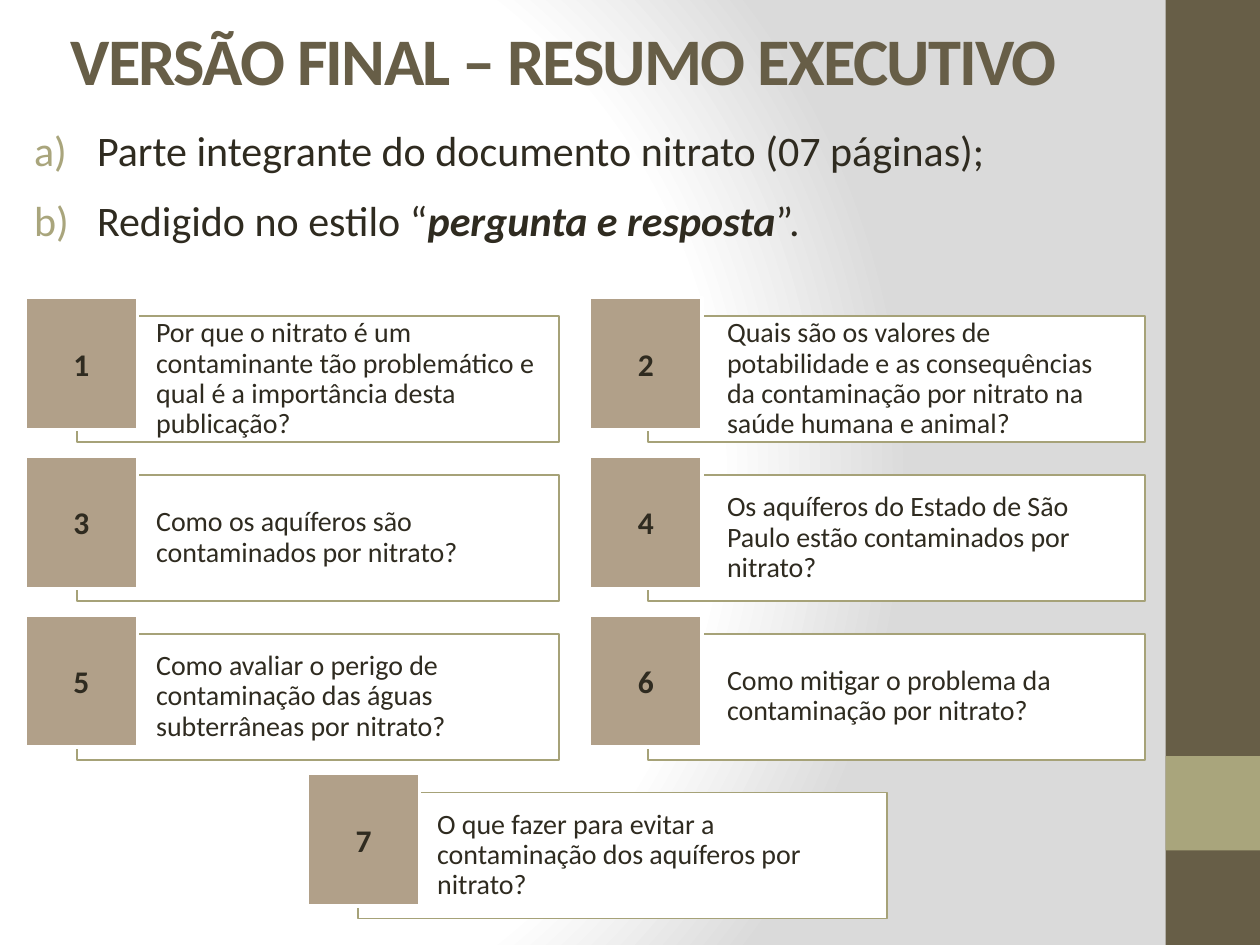
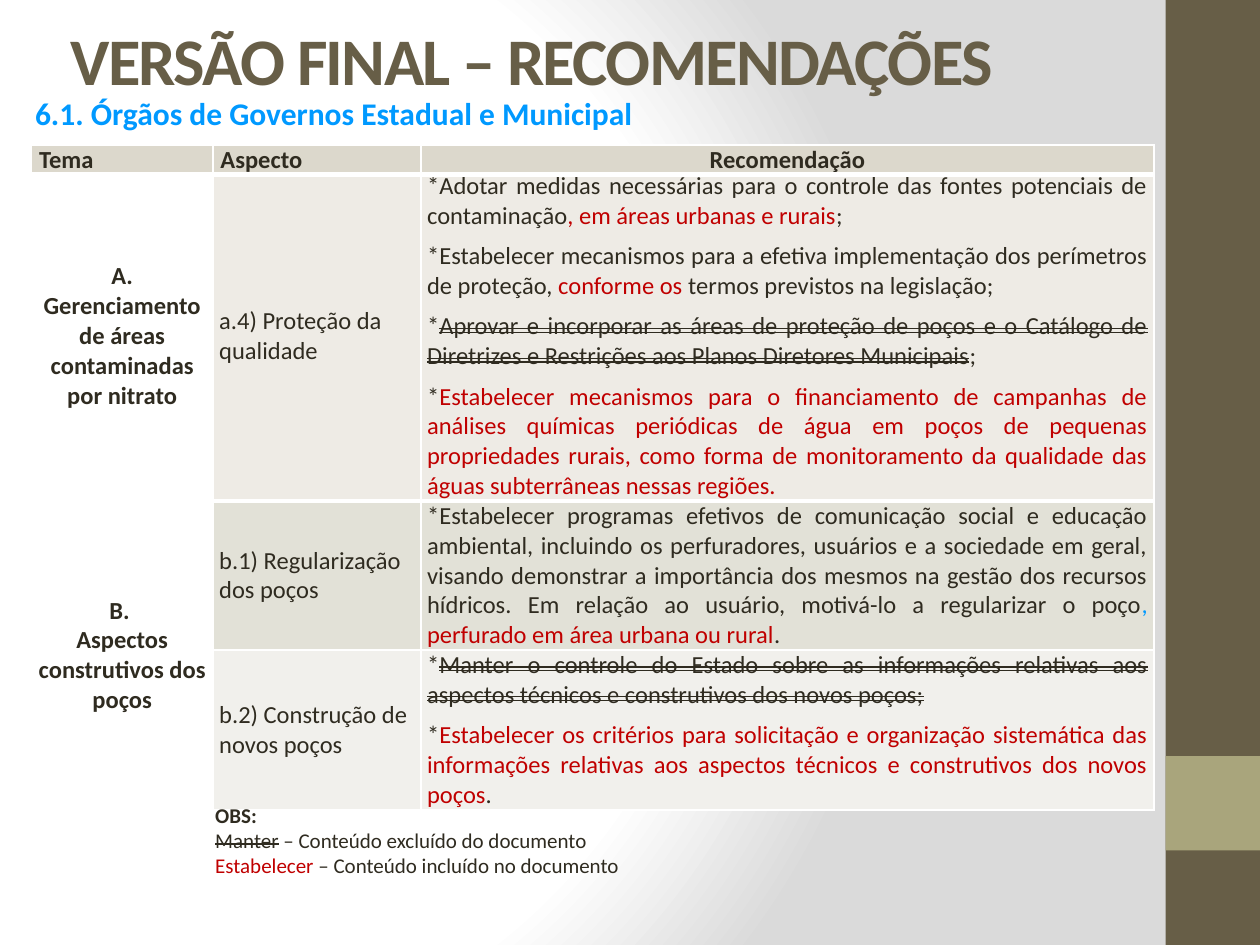
import pptx
import pptx.dml.color
import pptx.enum.shapes
import pptx.enum.text
import pptx.oxml
import pptx.oxml.ns
import pptx.util

Inches, Pt = pptx.util.Inches, pptx.util.Pt
RGB = pptx.dml.color.RGBColor
ALIGN = pptx.enum.text.PP_ALIGN
ANCHOR = pptx.enum.text.MSO_ANCHOR
RECTANGLE = pptx.enum.shapes.MSO_SHAPE.RECTANGLE

FONT = "Calibri"
OLIVE = RGB(0x67, 0x5E, 0x47)
SAGE = RGB(0xA9, 0xA5, 0x7C)
CARD_LINE = RGB(0xA6, 0xA2, 0x78)
TAN = RGB(0xB1, 0xA0, 0x89)
INK = RGB(0x2F, 0x2B, 0x20)
RED = RGB(0xC0, 0x00, 0x00)
BLUE = RGB(0x00, 0x99, 0xFF)
WHITE = RGB(0xFF, 0xFF, 0xFF)
HEAD_FILL = RGB(0xDC, 0xD8, 0xCC)
THEME_A_FILL = RGB(0xEE, 0xEB, 0xE5)
THEME_B_FILL = RGB(0xE2, 0xE1, 0xD7)
THEME_B_LIGHT = RGB(0xF1, 0xF0, 0xEC)

# Content: a paragraph is a string or a list of strings and (text, style) pairs
ADDED, BLUE_RUN = {"color": RED}, {"color": BLUE}
REMOVED, STRUCK = {"strike": "dblStrike"}, {"strike": "sngStrike"}
BOLD, BOLD_ITALIC = {"bold": True}, {"bold": True, "italic": True}

SUMMARY_TITLE = "VERSÃO FINAL – RESUMO EXECUTIVO"
SUMMARY_POINTS = [
    "Parte integrante do documento nitrato (07 páginas);",
    ["Redigido no estilo “", ("pergunta e resposta", BOLD_ITALIC), "”."],
]
QUESTIONS = [
    "Por que o nitrato é um contaminante tão problemático e qual é a importância desta publicação?",
    "Quais são os valores de potabilidade e as consequências da contaminação por nitrato na saúde humana e animal?",
    "Como os aquíferos são contaminados por nitrato?",
    "Os aquíferos do Estado de São Paulo estão contaminados por nitrato?",
    "Como avaliar o perigo de contaminação das águas subterrâneas por nitrato?",
    "Como mitigar o problema da contaminação por nitrato?",
    "O que fazer para evitar a contaminação dos aquíferos por nitrato?",
]
# Number left, card left, card width
LEFT_COLUMN, RIGHT_COLUMN = (0.2, 0.61, 3.83), (4.68, 5.14, 3.95)
LAST_CARD = (2.44, 2.84, 4.2)
CARD_TOP, CARD_PITCH = 2.51, 1.26

ADVICE_TITLE = "VERSÃO FINAL – RECOMENDAÇÕES"
ADVICE_SECTION = "6.1. Órgãos de Governos Estadual e Municipal"
ADVICE_HEADS = ["Tema", "Aspecto", "Recomendação"]
COLUMN_WIDTHS = [1.44, 1.65, 5.82]
# Theme, aspect, recommendations, row height, fill, bottom border
ADVICE = [
    (["A. Gerenciamento de áreas contaminadas por nitrato"],
     "a.4) Proteção da qualidade",
     [["*Adotar medidas necessárias para o controle das fontes potenciais de contaminação",
       (", em áreas urbanas e rurais", ADDED), ";"],
      ["*Estabelecer mecanismos para a efetiva implementação dos perímetros de proteção, ",
       ("conforme os ", ADDED), "termos previstos na legislação;"],
      ["*", ("Aprovar e incorporar as áreas de proteção de poços e o Catálogo de Diretrizes "
             "e Restrições aos Planos Diretores Municipais", REMOVED), ";"],
      ["*", ("Estabelecer mecanismos para o financiamento de campanhas de análises químicas "
             "periódicas de água em poços de pequenas propriedades rurais, como forma de "
             "monitoramento da qualidade das águas subterrâneas nessas regiões.", ADDED)]],
     2.61, THEME_A_FILL, 3),
    (["B. ", "Aspectos construtivos dos poços"],
     "b.1) Regularização dos poços",
     [["*Estabelecer programas efetivos de comunicação social e educação ambiental, incluindo "
       "os perfuradores, usuários e a sociedade em geral, visando demonstrar a importância dos "
       "mesmos na gestão dos recursos hídricos. Em relação ao usuário, motivá-lo a regularizar "
       "o poço", (", ", BLUE_RUN), ("perfurado em área urbana ou rural", ADDED), "."]],
     1.18, THEME_B_FILL, 1),
    ([],
     "b.2) Construção de novos poços",
     [["*", ("Manter o controle do Estado sobre as informações relativas aos aspectos técnicos "
             "e construtivos dos novos poços;", REMOVED)],
      ["*", ("Estabelecer os critérios para solicitação e organização sistemática das "
             "informações relativas aos aspectos técnicos e construtivos dos novos poços", ADDED),
       "."]],
     1.26, THEME_B_LIGHT, 1),
]
LEGEND = [
    [("OBS:", BOLD)],
    [("Manter", STRUCK), " – Conteúdo excluído do documento"],
    [("Estabelecer", ADDED), " – Conteúdo incluído no documento"],
]

BACKGROUND = (
    f'<a:gradFill {pptx.oxml.ns.nsdecls("a")} rotWithShape="1"><a:gsLst>'
    '<a:gs pos="0"><a:srgbClr val="FFFFFF"/></a:gs>'
    '<a:gs pos="75000"><a:srgbClr val="FFFFFF"/></a:gs>'
    '<a:gs pos="100000"><a:srgbClr val="DADADA"/></a:gs></a:gsLst>'
    '<a:path path="circle"><a:fillToRect l="20000" t="50000" r="100000" b="50000"/></a:path>'
    '</a:gradFill>')


def xml(tag, inner="", **attributes):
    listed = "".join(f' {key}="{value}"' for key, value in attributes.items())
    return pptx.oxml.parse_xml(
        f'<a:{tag} {pptx.oxml.ns.nsdecls("a")}{listed}>{inner}</a:{tag}>')


def write(frame, paragraphs, size=14, color=INK, bold=False, align=ALIGN.LEFT,
          line=None, after=0, tracking=None):
    """Fill a text frame with formatted paragraphs."""
    frame.word_wrap = True
    for index, runs in enumerate(paragraphs):
        paragraph = frame.add_paragraph() if index else frame.paragraphs[0]
        paragraph.alignment = align
        paragraph.space_before, paragraph.space_after = Pt(0), Pt(after)
        if line:
            paragraph.line_spacing = line
        for part in [runs] if isinstance(runs, str) else runs:
            text, style = (part, {}) if isinstance(part, str) else part
            run = paragraph.add_run()
            run.text = text
            run.font.name, run.font.size = FONT, Pt(size)
            run.font.bold = style.get("bold", bold)
            run.font.italic = style.get("italic", False)
            run.font.color.rgb = style.get("color", color)
            if "strike" in style:
                run.font._element.set("strike", style["strike"])
            if tracking:
                run.font._element.set("spc", str(tracking * 100))


def place(shape, left, top, width, height):
    shape.left, shape.top = Inches(left), Inches(top)
    shape.width, shape.height = Inches(width), Inches(height)


def inset(frame, left, top, right, bottom):
    frame.margin_left, frame.margin_top = Inches(left), Inches(top)
    frame.margin_right, frame.margin_bottom = Inches(right), Inches(bottom)


def add_box(slide, area, fill, line=None, weight=1):
    box = slide.shapes.add_shape(RECTANGLE, *map(Inches, area))
    box.shadow.inherit = False
    box.fill.solid()
    box.fill.fore_color.rgb = fill
    if line is None:
        box.line.fill.background()
    else:
        box.line.color.rgb, box.line.width = line, Pt(weight)
    box.text_frame.vertical_anchor = ANCHOR.MIDDLE
    return box


def add_label(slide, area, paragraphs, **style):
    label = slide.shapes.add_textbox(*map(Inches, area))
    write(label.text_frame, paragraphs, **style)
    return label.text_frame


def add_slide(deck, layout, title):
    slide = deck.slides.add_slide(deck.slide_layouts[layout])
    heading = slide.shapes.title
    place(heading, 0.46, 0, 9.73, 0.93)
    heading.text_frame.auto_size = pptx.enum.text.MSO_AUTO_SIZE.NONE
    heading.text_frame.vertical_anchor = ANCHOR.MIDDLE
    write(heading.text_frame, [title], size=38, color=OLIVE, bold=True, tracking=-1)
    return slide


def dress_master(deck, slide):
    """Give the master its background and side bands, drawn through a slide."""
    master = deck.slide_master
    master.background.fill.solid()
    solid = master.element.cSld.find(".//" + pptx.oxml.ns.qn("a:solidFill"))
    solid.getparent().replace(solid, pptx.oxml.parse_xml(BACKGROUND))
    bands = [((9.25, 0, 0.75, 7.5), OLIVE), ((9.25, 6, 0.75, 0.75), SAGE)]
    for position, (area, fill) in enumerate(bands, start=2):
        master.shapes.element.insert(position, add_box(slide, area, fill).element)


def add_grid(slide, top, heights):
    frame = slide.shapes.add_table(len(heights), len(COLUMN_WIDTHS), Inches(0.25), Inches(top),
                                   Inches(sum(COLUMN_WIDTHS)), Inches(sum(heights)))
    grid = frame.table
    grid.first_row = grid.horz_banding = False
    for column, width in zip(grid.columns, COLUMN_WIDTHS):
        column.width = Inches(width)
    for row, height in zip(grid.rows, heights):
        row.height = Inches(height)
    return grid


def fill_cell(cell, paragraphs, fill=None, bottom=1, side=0.05, **style):
    cell.margin_left = cell.margin_right = Inches(side)
    cell.margin_top = cell.margin_bottom = 0
    cell.vertical_anchor = ANCHOR.MIDDLE
    borders = cell._tc.get_or_add_tcPr()
    for edge, weight in (("L", 1), ("R", 1), ("T", 1), ("B", bottom)):
        borders.append(xml("ln" + edge, '<a:solidFill><a:srgbClr val="FFFFFF"/></a:solidFill>',
                           w=Pt(weight)))
    if fill is None:
        cell.fill.background()
    else:
        cell.fill.solid()
        cell.fill.fore_color.rgb = fill
    write(cell.text_frame, paragraphs, **style)


def build_summary(deck):
    slide = add_slide(deck, 1, SUMMARY_TITLE)
    dress_master(deck, slide)

    # Lettered points
    points = slide.placeholders[1]
    place(points, 0.17, 1.11, 8.35, 1.01)
    points.text_frame.auto_size = pptx.enum.text.MSO_AUTO_SIZE.NONE
    write(points.text_frame, SUMMARY_POINTS, size=24, line=0.5, after=26)
    for paragraph in points.text_frame.paragraphs:
        lettering = paragraph._p.get_or_add_pPr()
        lettering.set("marL", str(Inches(0.5)))
        lettering.set("indent", str(Inches(-0.5)))
        lettering.append(xml("buClr", f'<a:srgbClr val="{SAGE}"/>'))
        lettering.append(xml("buFont", typeface=FONT))
        lettering.append(xml("buAutoNum", type="alphaLcParenR"))

    # Numbered question cards, two to a row, the last one centred
    for index, question in enumerate(QUESTIONS):
        row, side = divmod(index, 2)
        column = LAST_CARD if index == len(QUESTIONS) - 1 else (LEFT_COLUMN, RIGHT_COLUMN)[side]
        number_left, card_left, card_width = column
        top = CARD_TOP + row * CARD_PITCH
        card = add_box(slide, (card_left, top, card_width, 1), WHITE, CARD_LINE)
        inset(card.text_frame, 0.63, 0.16, 0.16, 0.16)
        write(card.text_frame, [question], size=16, line=0.9)
        number = add_box(slide, (number_left, top - 0.15, 0.89, 1.05), TAN, WHITE, 2)
        write(number.text_frame, [str(index + 1)], size=18, bold=True, align=ALIGN.CENTER)


def build_advice(deck):
    slide = add_slide(deck, 5, ADVICE_TITLE)

    # Recommendations by theme
    advice = add_grid(slide, 1.36, [entry[3] for entry in ADVICE])
    advice.cell(1, 0).merge(advice.cell(2, 0))
    for row, (theme, aspect, actions, _, fill, bottom) in enumerate(ADVICE):
        fill_cell(advice.cell(row, 0), theme, bottom=bottom, bold=True, align=ALIGN.CENTER)
        fill_cell(advice.cell(row, 1), [aspect], fill, bottom)
        fill_cell(advice.cell(row, 2), actions, fill, bottom, align=ALIGN.JUSTIFY, after=6)

    # Section name and column heads
    section = add_label(slide, (0.18, 0.71, 5, 0.42), [ADVICE_SECTION],
                        size=18, color=BLUE, bold=True)
    section.vertical_anchor = ANCHOR.MIDDLE
    inset(section, 0.1, 0.03, 0.1, 0.08)
    heads = add_grid(slide, 1.15, [0.22])
    for column, head in enumerate(ADVICE_HEADS):
        fill_cell(heads.cell(0, column), [head], HEAD_FILL, 3, side=0.06, bold=True,
                  align=ALIGN.CENTER if column == 2 else ALIGN.LEFT)

    # Legend of the marks
    add_label(slide, (1.61, 6.32, 5.98, 0.71), LEGEND, size=12)


def main():
    deck = pptx.Presentation()
    deck.slide_width, deck.slide_height = Inches(10), Inches(7.5)
    build_summary(deck)
    build_advice(deck)
    deck.save("out.pptx")


if __name__ == "__main__":
    main()
